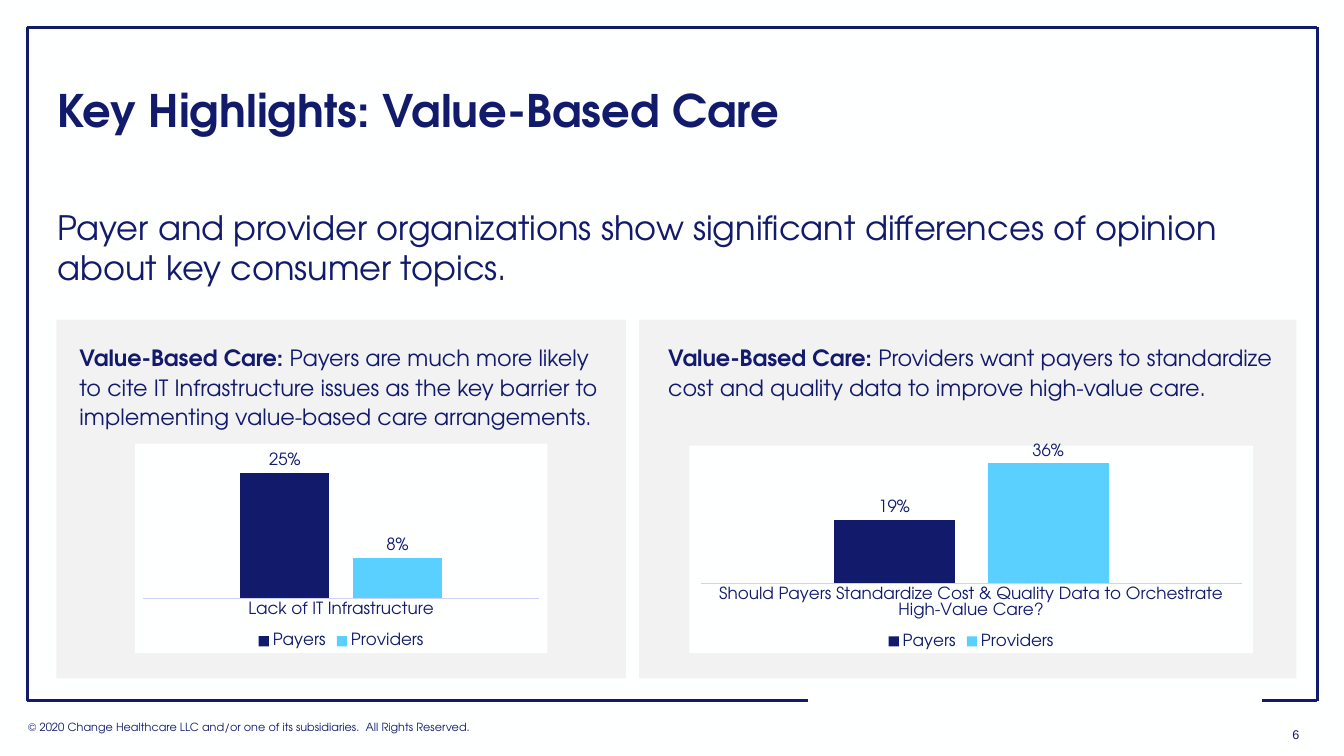
from collections import namedtuple

from lxml import etree
from pptx import Presentation
from pptx import util as u
from pptx.chart.data import CategoryChartData
from pptx.dml.color import RGBColor
from pptx.enum import chart as charts, shapes, text
from pptx.oxml import parse_xml
from pptx.oxml.ns import nsdecls, qn

COLUMNS, ROWS = 160, 90
CELL = u.Inches(13.33) / COLUMNS
FONT = "TeX Gyre Adventor"
NAVY, SKY, GREY, WHITE, PALE = "121A6C", "59D0FF", "F2F2F2", "FEFFFF", "CED1F7"

Box = namedtuple("Box", "left top width height")  # in grid columns and rows


def inside(box, left, top, width, height):
    """Box placed relative to the corner of another box."""
    return Box(box.left + left, box.top + top, width, height)


def lengths(values):
    return [u.Emu(round(value * CELL)) for value in values]


def colour(hex_string):
    return RGBColor.from_string(hex_string)


def paint(fill, hex_string):
    fill.solid()
    fill.fore_color.rgb = colour(hex_string)


def style(font, size, bold=False, name=FONT):
    font.name, font.size, font.bold = name, u.Pt(size), bold
    font.color.rgb = colour(NAVY)


def write(shape, *runs, size, bold_runs=0, name=FONT, spacing=None,
          anchor=text.MSO_ANCHOR.TOP, align=text.PP_ALIGN.LEFT):
    """Fill a shape with one paragraph whose first bold_runs runs are bold."""
    frame = shape.text_frame
    frame.word_wrap = True
    frame.auto_size = text.MSO_AUTO_SIZE.NONE
    frame.vertical_anchor = anchor
    para = frame.paragraphs[0]
    para.alignment = align
    if spacing:
        para.line_spacing = spacing
    for index, words in enumerate(runs):
        span = para.add_run()
        span.text = words
        style(span.font, size, index < bold_runs, name)


def add_text(page, box, *runs, **form):
    write(page.shapes.add_textbox(*lengths(box)), *runs, **form)


def add_frame(page, box):
    """Border with an opening in its bottom edge."""
    left, top = box.left, box.top
    right, bottom = left + box.width, top + box.height
    edges = [(left, top, right, top), (right, top, right, bottom),
             (left, top, left, bottom), (left, bottom, 96.24, bottom),
             (150.24, bottom, right, bottom)]
    for edge in edges:
        line = page.shapes.add_connector(shapes.MSO_CONNECTOR.STRAIGHT, *lengths(edge))
        line.line.color.rgb = colour(NAVY)
        line.line.width = u.Pt(2)
        etree.SubElement(line._element.spPr, qn("a:effectLst"))


def add_heading(page, box):
    title = page.shapes.title
    title.left, title.top, title.width, title.height = lengths(box)
    write(title, "Key Highlights: Value-Based Care", size=32, bold_runs=1,
          spacing=0.9, anchor=text.MSO_ANCHOR.MIDDLE)


def add_footer(page, box):
    add_text(page, inside(box, 0, 0.24, 78.24, 2.88),
             "© 2020 Change Healthcare LLC and/or one of its subsidiaries.  All Rights Reserved.",
             size=8)
    add_text(page, inside(box, box.width - 4.92, 0, 4.92, box.height), "6", size=9,
             name="Arial", anchor=text.MSO_ANCHOR.MIDDLE, align=text.PP_ALIGN.CENTER)


def add_columns(page, box, category, payers, providers, top_value):
    data = CategoryChartData(number_format="0%")
    data.categories = [category]
    data.add_series("Payers", [payers])
    data.add_series("Providers", [providers])
    chart = page.shapes.add_chart(
        charts.XL_CHART_TYPE.COLUMN_CLUSTERED, *lengths(box), data).chart
    style(chart.font, 12)
    chart.has_title = False
    chart.has_legend = True
    chart.legend.position = charts.XL_LEGEND_POSITION.BOTTOM
    chart.legend.include_in_layout = False
    style(chart.legend.font, 12)

    axis = chart.category_axis
    axis.major_tick_mark = charts.XL_TICK_MARK.NONE
    axis.format.line.color.rgb = colour(PALE)
    axis.format.line.width = u.Pt(0.75)
    style(axis.tick_labels.font, 12)
    # Automatic rotation lets a long category name wrap onto a second line.
    label_body = axis._element.find(qn("c:txPr")).find(qn("a:bodyPr"))
    for key, value in (("rot", "-60000000"), ("vert", "horz"), ("wrap", "square")):
        label_body.set(key, value)
    scale = chart.value_axis
    scale.visible = scale.has_major_gridlines = False
    scale.minimum_scale, scale.maximum_scale = 0, top_value

    bars = chart.plots[0]
    bars.gap_width, bars.overlap, bars.vary_by_categories = 219, -27, False
    for series, shade in zip(bars.series, (NAVY, SKY)):
        paint(series.format.fill, shade)
        labels = series.data_labels
        labels.show_value = True
        labels.number_format, labels.number_format_is_linked = "0%", False
        labels.position = charts.XL_LABEL_POSITION.OUTSIDE_END
        style(labels.font, 12)

    chart._chartSpace.chart.addnext(parse_xml(
        f'<c:spPr {nsdecls("c", "a")}><a:solidFill><a:srgbClr val="{WHITE}"/>'
        '</a:solidFill><a:ln><a:noFill/></a:ln></c:spPr>'))


def add_panel(page, box, message, indent, chart_left, chart_width, **chart):
    """Grey panel with a message above a chart."""
    panel = page.shapes.add_shape(shapes.MSO_SHAPE.RECTANGLE, *lengths(box))
    panel.shadow.inherit = False
    paint(panel.fill, GREY)
    panel.line.fill.background()
    add_text(page, inside(box, indent, 2.04, box.width - indent, 12), "Value-Based Care: ",
             message, size=16, bold_runs=1, spacing=1.1)
    add_columns(page, inside(box, chart_left, 14.76, chart_width, 24.96), **chart)


def main():
    deck = Presentation()
    deck.slide_width, deck.slide_height = lengths((COLUMNS, ROWS))
    page = deck.slides.add_slide(deck.slide_layouts[5])
    paint(page.background.fill, WHITE)
    add_footer(page, Box(2.16, 84.96, 154.56, 5.04))
    add_frame(page, Box(3.24, 3.24, 153.6, 80.16))
    add_heading(page, Box(5.64, 4.8, 148.8, 17.4))
    add_text(page, Box(5.64, 24, 148.8, 12.36),
             "Payer and provider organizations show significant differences of opinion "
             "about key consumer topics.", size=24)
    add_panel(page, Box(6.72, 38.04, 67.8, 42.72),
              "Payers are much more likely to cite IT Infrastructure issues as the key "
              "barrier to implementing value-based care arrangements.",
              indent=1.56, chart_left=9.36, chart_width=49.08,
              category="Lack of IT Infrastructure", payers=0.25, providers=0.08,
              top_value=0.3)
    add_panel(page, Box(76.08, 38.04, 78.24, 42.72),
              "Providers want payers to standardize cost and quality data to improve "
              "high-value care.",
              indent=2.28, chart_left=6, chart_width=67.08,
              category="Should Payers Standardize Cost & Quality Data to Orchestrate "
                       "High-Value Care?", payers=0.19, providers=0.36,
              top_value=0.4)
    deck.save("out.pptx")


if __name__ == "__main__":
    main()
